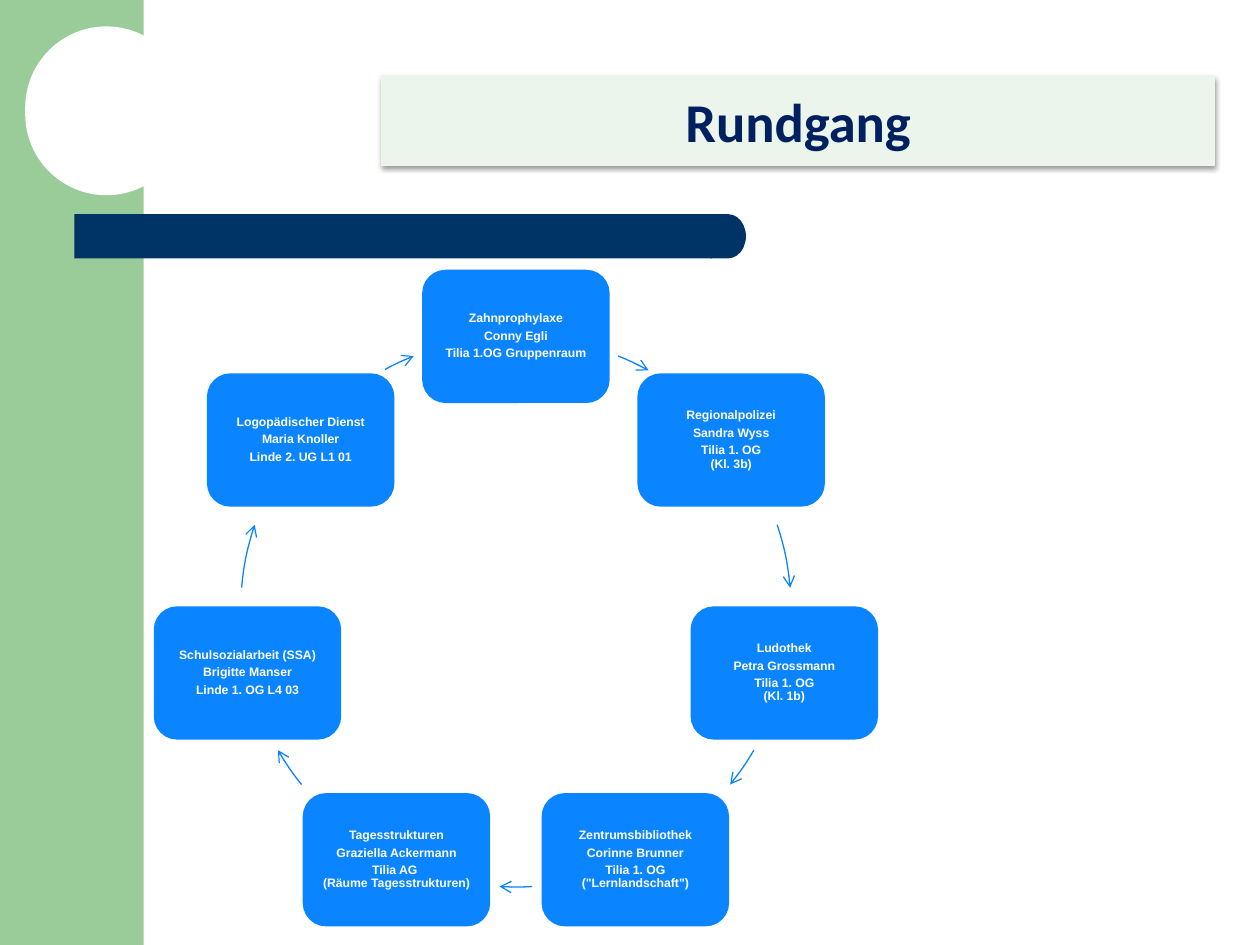
from math import cos, pi, sin

from lxml import etree
from pptx import Presentation
from pptx.dml.color import RGBColor
from pptx.enum.shapes import MSO_SHAPE
from pptx.enum.text import MSO_ANCHOR, MSO_AUTO_SIZE, PP_ALIGN
from pptx.oxml.ns import qn
from pptx.util import Inches, Pt

RECTANGLE = MSO_SHAPE.RECTANGLE
ROUNDED = MSO_SHAPE.ROUNDED_RECTANGLE
DELAY = MSO_SHAPE.FLOWCHART_DELAY
MIDDLE = MSO_ANCHOR.MIDDLE
NO_AUTOFIT = MSO_AUTO_SIZE.NONE
CENTER = PP_ALIGN.CENTER

WHITE = RGBColor(0xFF, 0xFF, 0xFF)
GREEN = RGBColor(0x99, 0xCC, 0x99)
PALE_GREEN = RGBColor(0xEB, 0xF5, 0xEB)
NAVY = RGBColor(0x00, 0x33, 0x66)
TITLE_BLUE = RGBColor(0x00, 0x20, 0x60)
BLUE = RGBColor(0x0A, 0x85, 0xFF)

TOUR_LEFT, TOUR_TOP, TOUR_DIAMETER = 1.91, 2.67, 4.37
RADIUS = TOUR_DIAMETER / 2
STATION_WIDTH, STATION_HEIGHT = 1.46, 1.03
DEGREE = 60000

STATIONS = [
    ["Zahnprophylaxe", "Conny Egli", "Tilia 1.OG Gruppenraum"],
    ["Regionalpolizei", "Sandra Wyss", "Tilia 1. OG\v(Kl. 3b)"],
    ["Ludothek", "Petra Grossmann", "Tilia 1. OG\v(Kl. 1b)"],
    ["Zentrumsbibliothek", "Corinne Brunner", "Tilia 1. OG\v(\"Lernlandschaft\")"],
    ["Tagesstrukturen", "Graziella Ackermann", "Tilia AG \v(Räume Tagesstrukturen)"],
    ["Schulsozialarbeit (SSA)", "Brigitte Manser", "Linde 1. OG L4 03"],
    ["Logopädischer Dienst", "Maria Knoller", "Linde 2. UG L1 01"],
]
RIGHT_ARCS = [(21.8, 28.8), (71.6, 85), (120.2, 128.9)]
BOTTOM_ARC = (176.6, 183.4)
LEFT_ARCS = [(331.6, 338.2), (275, 288.4), (231.1, 239.8)][::-1]


def write_text(frame, lines, *, size, font, color, spacing=1.0, after=0, inset=0.05):
    frame.word_wrap = True
    frame.auto_size = NO_AUTOFIT
    frame.vertical_anchor = MIDDLE
    frame.margin_left = frame.margin_right = Inches(inset)
    frame.margin_top = frame.margin_bottom = Inches(inset)
    for index, line in enumerate(lines):
        paragraph = frame.paragraphs[0] if index == 0 else frame.add_paragraph()
        paragraph.text = line
        paragraph.alignment = CENTER
        paragraph.line_spacing = spacing
        paragraph.space_before = Pt(0)
        paragraph.space_after = Pt(after)
        paragraph.font.size = Pt(size)
        paragraph.font.name = font
        paragraph.font.bold = True
        paragraph.font.color.rgb = color


def add_block(slide, preset, left, top, width, height, color, corner=None):
    block = slide.shapes.add_shape(
        preset, Inches(left), Inches(top), Inches(width), Inches(height))
    block.shadow.inherit = False
    block.fill.solid()
    block.fill.fore_color.rgb = color
    block.line.fill.background()
    if corner is not None:
        block.adjustments[0] = corner
    return block


def add_decoration(slide):
    add_block(slide, RECTANGLE, 0, 0, 1.14, 7.5, GREEN)
    add_block(slide, ROUNDED, 0.2, 0.21, 1.29, 1.34, WHITE, corner=0.5)
    add_block(slide, RECTANGLE, 0.59, 1.7, 5.06, 0.35, NAVY)
    add_block(slide, DELAY, 5.64, 1.7, 0.28, 0.35, NAVY)


def add_soft_shadow(shape):
    shape.shadow.inherit = False
    effects = shape.element.spPr.find(qn("a:effectLst"))
    shadow = etree.SubElement(
        effects, qn("a:outerShdw"), blurRad=str(Pt(3.1)), dist=str(Pt(1.6)),
        dir=str(90 * DEGREE), rotWithShape="0")
    black = etree.SubElement(shadow, qn("a:srgbClr"), val="000000")
    etree.SubElement(black, qn("a:alpha"), val="38000")


def add_title(slide, text):
    title = slide.shapes.title
    title.left, title.top = Inches(3.03), Inches(0.6)
    title.width, title.height = Inches(6.61), Inches(0.71)
    title.fill.solid()
    title.fill.fore_color.rgb = PALE_GREEN
    title.line.color.rgb = PALE_GREEN
    title.line.width = Pt(0.75)
    add_soft_shadow(title)
    write_text(title.text_frame, [text], size=31.2, font="Calibri", color=TITLE_BLUE)


def point_in_tour(angle):
    return RADIUS * (1 + sin(angle)), RADIUS * (1 - cos(angle))


def add_station(slide, angle, lines):
    x, y = point_in_tour(angle)
    station = add_block(
        slide, ROUNDED, TOUR_LEFT + x - STATION_WIDTH / 2,
        TOUR_TOP + y - STATION_HEIGHT / 2, STATION_WIDTH, STATION_HEIGHT, BLUE)
    station.line.color.rgb = BLUE
    station.line.width = Pt(2)
    write_text(station.text_frame, lines, size=7, font="Arial", color=WHITE,
               spacing=0.9, after=2.45, inset=0.03)


def add_arc_arrow(slide, start, end):
    left, top, size = Inches(TOUR_LEFT), Inches(TOUR_TOP), Inches(TOUR_DIAMETER)
    builder = slide.shapes.build_freeform(left, top)
    builder.add_line_segments([(left + size, top + size)], close=False)
    arrow = builder.convert_to_shape()
    outline = next(arrow.element.iter(qn("a:path")))
    for segment in list(outline):
        outline.remove(segment)
    x, y = point_in_tour(start * pi / 180)
    move = etree.SubElement(outline, qn("a:moveTo"))
    etree.SubElement(move, qn("a:pt"), x=str(Inches(x)), y=str(Inches(y)))
    radius = str(Inches(RADIUS))
    etree.SubElement(
        outline, qn("a:arcTo"), wR=radius, hR=radius,
        stAng=str(round((start - 90) % 360 * DEGREE)),
        swAng=str(round((end - start) * DEGREE)))
    arrow.shadow.inherit = False
    arrow.fill.background()
    arrow.line.color.rgb = BLUE
    arrow.line.width = Pt(0.75)
    etree.SubElement(arrow.element.spPr.find(qn("a:ln")), qn("a:tailEnd"), type="arrow")


def add_tour(slide):
    arcs = RIGHT_ARCS + [BOTTOM_ARC] + LEFT_ARCS
    for index, (lines, arc) in enumerate(zip(STATIONS, arcs)):
        add_station(slide, 2 * pi * index / len(STATIONS), lines)
        add_arc_arrow(slide, *arc)


def main():
    presentation = Presentation()
    presentation.slide_width = Inches(10)
    presentation.slide_height = Inches(7.5)
    slide = presentation.slides.add_slide(presentation.slide_layouts[5])
    add_decoration(slide)
    add_title(slide, "Rundgang")
    add_tour(slide)
    presentation.save("out.pptx")


if __name__ == "__main__":
    main()
